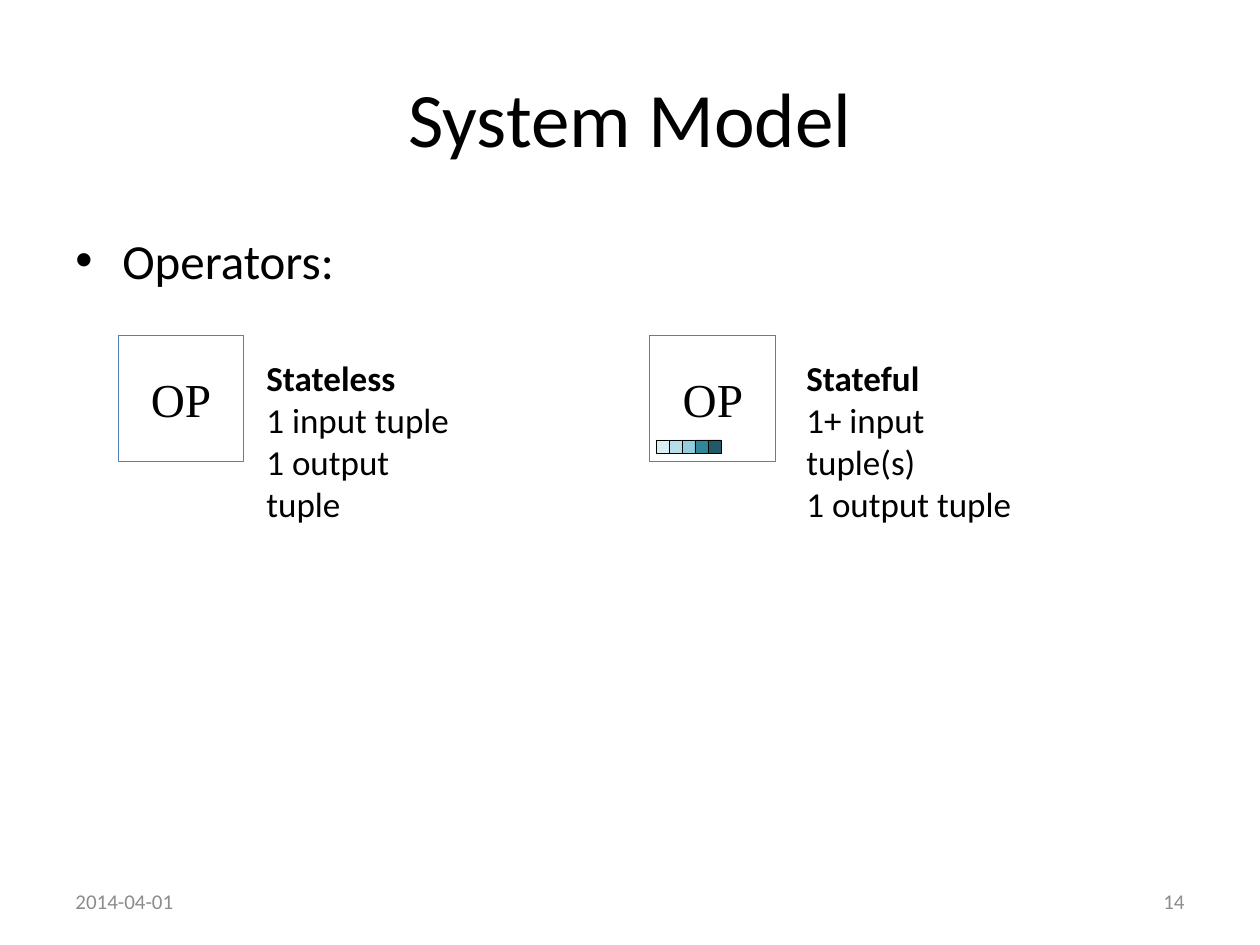
from dataclasses import dataclass

from lxml import etree
from pptx import Presentation
from pptx import util as u
from pptx.dml.color import RGBColor
from pptx.enum import shapes, text
from pptx.oxml.ns import qn

EMU_PER_PX = 914400 / 126
BLACK = RGBColor(0x00, 0x00, 0x00)
GREY = RGBColor(0x8C, 0x8C, 0x8C)
BLUE = RGBColor(0x4F, 0x81, 0xBD)
STATE_TINTS = tuple(
    RGBColor.from_string(tint)
    for tint in ("DBEEF4", "B7DEE8", "93CDDD", "31859C", "215968")
)
OPERATOR_TOP, OPERATOR_SIZE = 336, 126
CELL_SIZE = 13


@dataclass(frozen=True)
class Box:
    left: int
    top: int
    width: int
    height: int

    def emu(self) -> tuple[u.Emu, ...]:
        edges = (self.left, self.top, self.width, self.height)
        return tuple(px(edge) for edge in edges)


@dataclass(frozen=True)
class Operator:
    left: int
    description: Box
    heading: str
    details: tuple[str, ...]
    state: tuple[RGBColor, ...] = ()


@dataclass(frozen=True)
class Footer:
    left: int
    label: str
    align: text.PP_ALIGN


OPERATORS = (
    Operator(118, Box(254, 350, 219, 140), "Stateless",
             ("1 input tuple\v1 output tuple",)),
    Operator(650, Box(794, 350, 257, 140), "Stateful",
             ("1+ input tuple(s)", "1 output tuple"), STATE_TINTS),
)
FOOTERS = (
    Footer(903, "14", text.PP_ALIGN.RIGHT),
    Footer(63, "2014-04-01", text.PP_ALIGN.LEFT),
)


def px(length: int) -> u.Emu:
    return u.Emu(round(length * EMU_PER_PX))


def style(paragraph, size: int, color: RGBColor = BLACK, font: str = "Calibri",
          bold: bool = False, align: text.PP_ALIGN = text.PP_ALIGN.LEFT) -> None:
    paragraph.alignment = align
    for run in paragraph.runs:
        run.font.size = u.Pt(size)
        run.font.name = font
        run.font.bold = bold
        run.font.color.rgb = color


def add_text(slide, box: Box, lines: tuple[str, ...]):
    frame = slide.shapes.add_textbox(*box.emu()).text_frame
    frame.word_wrap = True
    frame.text = "\n".join(lines)
    return frame


def add_rectangle(parent, box: Box, line: RGBColor, weight: float):
    rectangle = parent.shapes.add_shape(shapes.MSO_SHAPE.RECTANGLE, *box.emu())
    rectangle.shadow.inherit = False
    rectangle.fill.background()
    rectangle.line.color.rgb = line
    rectangle.line.width = u.Pt(weight)
    return rectangle


def add_operator(slide, operator: Operator) -> None:
    """Draw the operator square, its state cells if any, and its description."""
    parent = slide.shapes.add_group_shape() if operator.state else slide
    square = add_rectangle(
        parent, Box(operator.left, OPERATOR_TOP, OPERATOR_SIZE, OPERATOR_SIZE),
        BLUE, 0.5)
    square.text_frame.text = "OP"
    square.text_frame.vertical_anchor = text.MSO_ANCHOR.MIDDLE
    style(square.text_frame.paragraphs[0], 27, font="Times New Roman",
          align=text.PP_ALIGN.CENTER)

    for index, tint in enumerate(operator.state):
        cell = add_rectangle(
            parent, Box(operator.left + 6 + index * CELL_SIZE,
                        OPERATOR_TOP + 104, CELL_SIZE, CELL_SIZE),
            BLACK, 0.25)
        cell.fill.solid()
        cell.fill.fore_color.rgb = tint

    description = add_text(slide, operator.description,
                           (operator.heading, *operator.details))
    for index, paragraph in enumerate(description.paragraphs):
        style(paragraph, 20, bold=index == 0)


def add_topic(slide) -> None:
    topic = add_text(slide, Box(63, 224, 1134, 311), ("Operators:",)).paragraphs[0]
    style(topic, 28)
    topic.space_before = u.Pt(5.6)
    properties = topic._p.get_or_add_pPr()
    properties.set("marL", str(px(47)))
    properties.set("indent", str(-px(47)))
    etree.SubElement(properties, qn("a:buFont")).set("typeface", "Arial")
    etree.SubElement(properties, qn("a:buChar")).set("char", "•")


def add_footer(slide, footer: Footer) -> None:
    frame = add_text(slide, Box(footer.left, 876, 294, 50), (footer.label,))
    frame.vertical_anchor = text.MSO_ANCHOR.MIDDLE
    style(frame.paragraphs[0], 12, GREY, align=footer.align)


def main() -> None:
    deck = Presentation()
    deck.slide_width, deck.slide_height = px(1260), px(945)
    slide = deck.slides.add_slide(deck.slide_layouts[5])

    title = slide.shapes.title
    title.left, title.top, title.width, title.height = Box(63, 38, 1134, 158).emu()
    title.text_frame.text = "System Model"
    title.text_frame.vertical_anchor = text.MSO_ANCHOR.MIDDLE
    style(title.text_frame.paragraphs[0], 44, align=text.PP_ALIGN.CENTER)

    add_topic(slide)
    for operator in OPERATORS:
        add_operator(slide, operator)
    for footer in FOOTERS:
        add_footer(slide, footer)
    deck.save("out.pptx")


if __name__ == "__main__":
    main()
